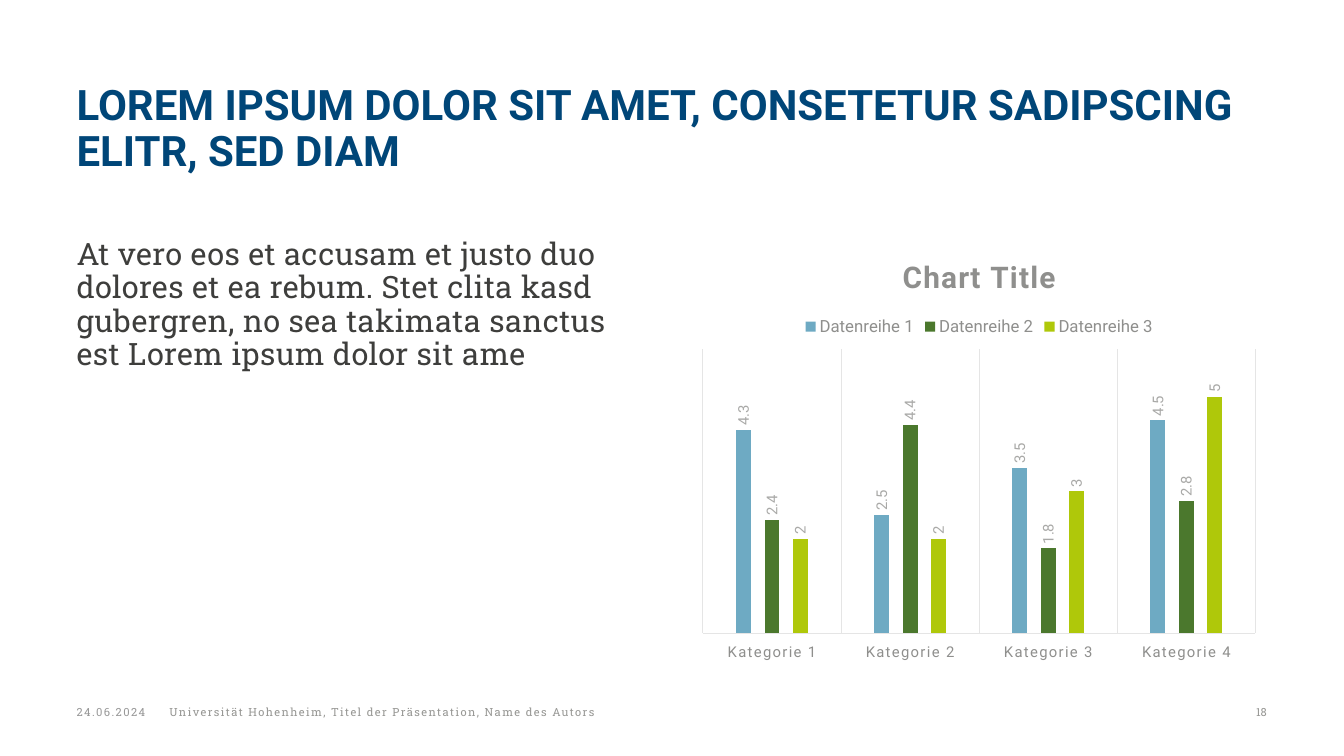
from dataclasses import dataclass
from typing import Any, NamedTuple

from lxml.etree import SubElement
from pptx import Presentation
from pptx.chart.chart import Chart
from pptx.chart.data import CategoryChartData
from pptx.dml.color import RGBColor
from pptx.enum.chart import XL_CHART_TYPE as ChartType
from pptx.enum.chart import XL_LABEL_POSITION as LabelPosition
from pptx.enum.chart import XL_LEGEND_POSITION as LegendPosition
from pptx.enum.chart import XL_TICK_LABEL_POSITION as TickLabels
from pptx.enum.chart import XL_TICK_MARK as TickMark
from pptx.enum.text import MSO_ANCHOR as Anchor
from pptx.enum.text import MSO_AUTO_SIZE as AutoSize
from pptx.enum.text import PP_ALIGN as Align
from pptx.oxml import parse_xml
from pptx.oxml.ns import nsdecls, qn
from pptx.slide import Slide
from pptx.util import Pt


class Box(NamedTuple):
    left: float
    top: float
    width: float
    height: float


class Style(NamedTuple):
    name: str
    size: float
    color: str
    bold: bool = False
    tracking: float = 0


@dataclass(frozen=True)
class Theme:
    title: Style = Style("Roboto", 30, "004678", bold=True)
    body: Style = Style("Roboto Slab", 22, "3E3E3C", tracking=0.3)
    date: Style = Style("Roboto Slab", 8, "989898", tracking=1)
    footer: Style = Style("Roboto Slab", 8, "989895", tracking=1)
    page: Style = Style("Roboto Slab", 8, "989895")
    chart: Style = Style("Roboto", 10, "525250")
    chart_title: Style = Style("Roboto", 21.3, "8F8F8D", bold=True, tracking=1)
    legend: Style = Style("Roboto", 12, "8F8F8D")
    category: Style = Style("Roboto", 10.6, "8F8F8D", tracking=1)
    value: Style = Style("Roboto", 10.6, "A9A9A7")
    grid: str = "E5E5E5"
    grid_width: float = 0.75


@dataclass(frozen=True)
class DataRow:
    name: str
    values: tuple[float, ...]
    color: str


@dataclass(frozen=True)
class FooterItem:
    text: str
    left: float
    width: float
    style: Style
    align: Align = Align.LEFT


THEME = Theme()
MARGIN, CONTENT_WIDTH = 54.72, 850.32
COLUMN_WIDTH, COLUMN_TOP, COLUMN_HEIGHT = 411.12, 170.64, 303.12
RIGHT_EDGE = MARGIN + CONTENT_WIDTH
FOOTER_TOP, FOOTER_HEIGHT, PAGE_WIDTH = 486.72, 43.2, 65.52

TITLE = "LOREM IPSUM DOLOR SIT AMET, CONSETETUR SADIPSCING ELITR, SED DIAM"
BODY = (
    "At vero eos et accusam et justo duo dolores et ea rebum. Stet clita kasd "
    "gubergren, no sea takimata sanctus est Lorem ipsum dolor sit ame"
)
DATA_ROWS = (
    DataRow("Datenreihe 1", (4.3, 2.5, 3.5, 4.5), "6EAAC3"),
    DataRow("Datenreihe 2", (2.4, 4.4, 1.8, 2.8), "4B782D"),
    DataRow("Datenreihe 3", (2, 2, 3, 5), "AFC80A"),
)
CATEGORIES = [f"Kategorie {number}" for number in range(1, 5)]
FOOTER = (
    FooterItem("24.06.2024", MARGIN, 56.16, THEME.date),
    FooterItem("Universität Hohenheim, Titel der Präsentation, Name des Autors",
               120.96, 708.48, THEME.footer),
    FooterItem("18", RIGHT_EDGE - PAGE_WIDTH, PAGE_WIDTH, THEME.page, Align.RIGHT),
)
PLOT_LAYOUT = {"x": 0.02, "y": 0.26, "w": 0.96, "h": 0.67}


def apply(target: Any, formats: dict[str, Any]) -> None:
    for name, value in formats.items():
        setattr(target, name, value)


def points(box: Box) -> list[Pt]:
    return [Pt(length) for length in box]


def style_font(font: Any, style: Style) -> None:
    apply(font, {"name": style.name, "size": Pt(style.size), "bold": style.bold})
    font.color.rgb = RGBColor.from_string(style.color)


def track(properties: Any, style: Style) -> None:
    properties.set("spc", str(round(style.tracking * 100)))


def write(shape: Any, text: str, style: Style, anchor: Anchor = Anchor.TOP,
          align: Align = Align.LEFT, line_spacing: float = 1.0) -> Any:
    frame = shape.text_frame
    apply(frame, {"margin_left": 0, "margin_top": 0, "margin_right": 0,
                  "margin_bottom": 0, "word_wrap": True,
                  "auto_size": AutoSize.NONE, "vertical_anchor": anchor})
    paragraph = frame.paragraphs[0]
    apply(paragraph, {"alignment": align, "line_spacing": line_spacing,
                      "space_before": Pt(0)})
    run = paragraph.add_run()
    run.text = text
    style_font(run.font, style)
    track(run._r.get_or_add_rPr(), style)
    return paragraph


def place(shape: Any, box: Box) -> None:
    apply(shape, dict(zip(Box._fields, points(box))))


def add_headline_and_text(slide: Slide) -> None:
    headline, statement = slide.shapes.title, slide.placeholders[1]
    place(headline, Box(MARGIN, 60.48, CONTENT_WIDTH, 82.08))
    write(headline, TITLE, THEME.title, line_spacing=0.9)
    place(statement, Box(MARGIN, COLUMN_TOP, COLUMN_WIDTH, COLUMN_HEIGHT))
    paragraph = write(statement, BODY, THEME.body, line_spacing=0.9)
    properties = paragraph._p.get_or_add_pPr()
    properties.set("marL", "0")
    properties.set("indent", "0")
    SubElement(properties, qn("a:buNone"))


def add_footer(slide: Slide) -> None:
    for item in FOOTER:
        box = Box(item.left, FOOTER_TOP, item.width, FOOTER_HEIGHT)
        write(slide.shapes.add_textbox(*points(box)), item.text, item.style,
              Anchor.MIDDLE, item.align)


def set_plot_layout(chart: Chart) -> None:
    plot_area = chart._chartSpace.find(f".//{qn('c:plotArea')}")
    for layout in plot_area.findall(qn("c:layout")):
        plot_area.remove(layout)
    sizes = "".join(f'<c:{key} val="{size}"/>' for key, size in PLOT_LAYOUT.items())
    plot_area.insert(0, parse_xml(
        f'<c:layout {nsdecls("c")}><c:manualLayout><c:layoutTarget val="inner"/>'
        f'<c:xMode val="edge"/><c:yMode val="edge"/>{sizes}</c:manualLayout></c:layout>'))


def format_axes(chart: Chart) -> None:
    apply(chart.value_axis, {"visible": False, "has_major_gridlines": False,
                             "minimum_scale": 0, "maximum_scale": 6})
    axis = chart.category_axis
    apply(axis, {"has_major_gridlines": True, "major_tick_mark": TickMark.NONE,
                 "minor_tick_mark": TickMark.NONE,
                 "tick_label_position": TickLabels.LOW})
    for line in (axis.format.line, axis.major_gridlines.format.line):
        line.color.rgb = RGBColor.from_string(THEME.grid)
        line.width = Pt(THEME.grid_width)
    style_font(axis.tick_labels.font, THEME.category)
    track(axis._element.find(f".//{qn('a:defRPr')}"), THEME.category)


def format_series(chart: Chart) -> None:
    plot = chart.plots[0]
    apply(plot, {"gap_width": 444, "overlap": -90, "vary_by_categories": False})
    for series, row in zip(plot.series, DATA_ROWS):
        series.format.fill.solid()
        series.format.fill.fore_color.rgb = RGBColor.from_string(row.color)
        labels = series.data_labels
        apply(labels, {"show_value": True, "position": LabelPosition.OUTSIDE_END})
        style_font(labels.font, THEME.value)
        rotation = labels._element.find(f".//{qn('a:bodyPr')}")
        rotation.set("rot", "-5400000")
        rotation.set("vert", "horz")


def add_column_chart(slide: Slide) -> None:
    data = CategoryChartData()
    data.categories = CATEGORIES
    for row in DATA_ROWS:
        data.add_series(row.name, row.values)
    box = Box(RIGHT_EDGE - COLUMN_WIDTH, COLUMN_TOP, COLUMN_WIDTH, COLUMN_HEIGHT)
    chart = slide.shapes.add_chart(ChartType.COLUMN_CLUSTERED, *points(box), data).chart
    style_font(chart.font, THEME.chart)
    apply(chart, {"has_title": True, "has_legend": True})
    heading = chart.chart_title.text_frame.paragraphs[0].add_run()
    heading.text = "Chart Title"
    style_font(heading.font, THEME.chart_title)
    track(heading._r.get_or_add_rPr(), THEME.chart_title)
    apply(chart.legend, {"position": LegendPosition.TOP, "include_in_layout": False})
    style_font(chart.legend.font, THEME.legend)
    format_axes(chart)
    format_series(chart)
    set_plot_layout(chart)


def main() -> None:
    deck = Presentation()
    apply(deck, {"slide_width": Pt(960), "slide_height": Pt(540)})
    slide = deck.slides.add_slide(deck.slide_layouts[1])
    add_headline_and_text(slide)
    add_column_chart(slide)
    add_footer(slide)
    deck.save("out.pptx")


if __name__ == "__main__":
    main()
